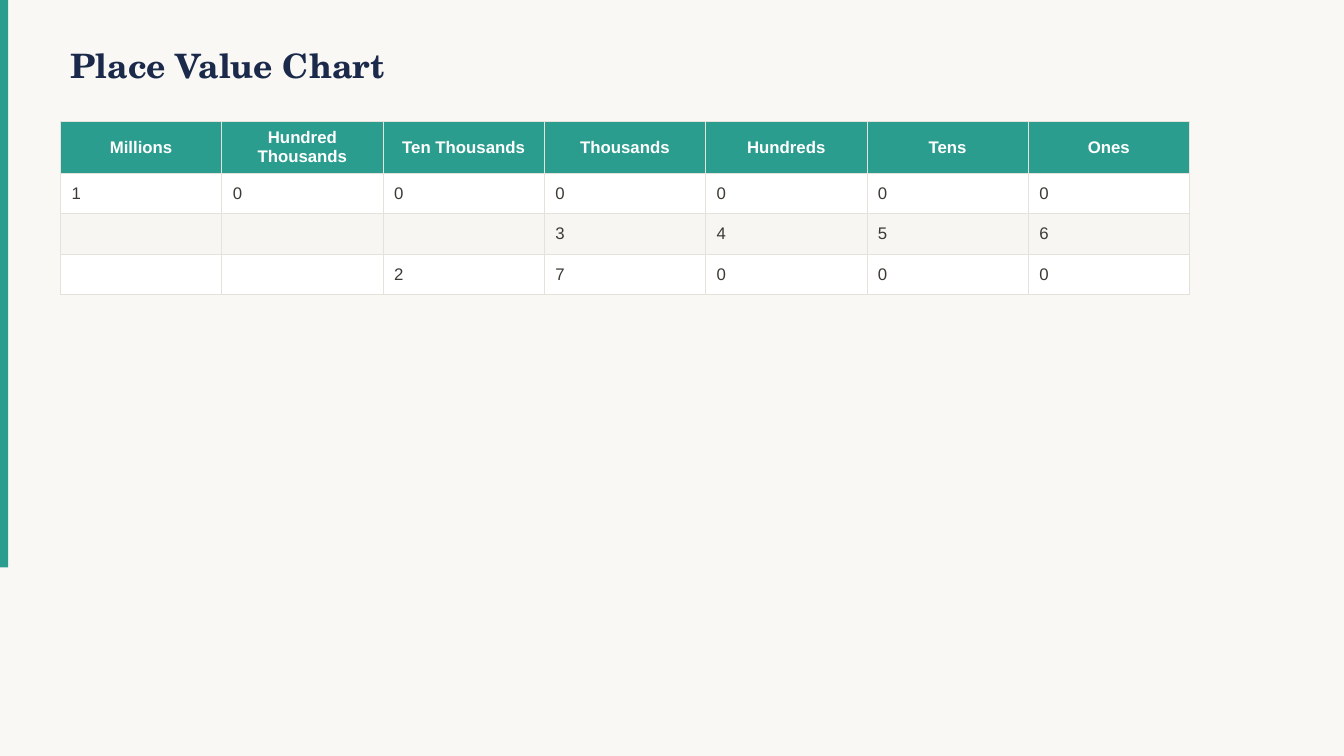
import pptx
import pptx.dml.color
import pptx.enum.shapes
import pptx.enum.text
import pptx.oxml
import pptx.oxml.ns
import pptx.util
from pptx.util import Inches

TEAL = "2A9D8F"
NAVY = "1B2A4A"
INK = "3D3A36"
WHITE = "FFFFFF"
STRIPE = "F8F6F3"
RULE = "E5E2DC"
PAPER = "FAF8F5"

PLACES = ["Millions", "Hundred Thousands", "Ten Thousands", "Thousands",
          "Hundreds", "Tens", "Ones"]
NUMBERS = ["1000000", "3456", "27000"]


def color(value):
    return pptx.dml.color.RGBColor.from_string(value)


def style_font(font, name, size, hue, bold):
    font.name = name
    font.size = pptx.util.Pt(size)
    font.color.rgb = color(hue)
    font.bold = bold


def add_accent_bar(slide, left, top, width, height):
    bar = slide.shapes.add_shape(pptx.enum.shapes.MSO_SHAPE.RECTANGLE,
                                 Inches(left), Inches(top), Inches(width), Inches(height))
    bar.shadow.inherit = False
    bar.fill.solid()
    bar.fill.fore_color.rgb = color(TEAL)
    bar.line.fill.background()


def add_title(slide, left, top, width, height):
    title = slide.shapes.add_textbox(Inches(left), Inches(top), Inches(width), Inches(height))
    frame = title.text_frame
    frame.word_wrap = True
    frame.vertical_anchor = pptx.enum.text.MSO_ANCHOR.MIDDLE
    heading = frame.paragraphs[0]
    heading.text = "Place Value Chart"
    style_font(heading.font, "TeX Gyre Schola", 24, NAVY, True)


def add_borders(cell):
    properties = cell._tc.get_or_add_tcPr()
    for side in ("lnL", "lnR", "lnT", "lnB"):
        properties.append(pptx.oxml.parse_xml(
            f'<a:{side} {pptx.oxml.ns.nsdecls("a")} w="{pptx.util.Pt(0.5)}">'
            f'<a:solidFill><a:srgbClr val="{RULE}"/></a:solidFill></a:{side}>'))


def fill_cell(cell, text, background, hue, is_header):
    add_borders(cell)
    cell.fill.solid()
    cell.fill.fore_color.rgb = color(background)
    cell.vertical_anchor = pptx.enum.text.MSO_ANCHOR.MIDDLE
    cell.margin_left = cell.margin_right = Inches(0.11)
    cell.margin_top = cell.margin_bottom = Inches(0.06)
    entry = cell.text_frame.paragraphs[0]
    if text:
        entry.text = text
    if is_header:
        entry.alignment = pptx.enum.text.PP_ALIGN.CENTER
    style_font(entry.font, "Arial", 12, hue, is_header)


def add_place_value_table(slide, left, top, width, header_height, row_height):
    rows = [PLACES] + [[""] * (len(PLACES) - len(number)) + list(number) for number in NUMBERS]
    height = header_height + row_height * len(NUMBERS)
    table = slide.shapes.add_table(len(rows), len(PLACES), Inches(left), Inches(top),
                                   Inches(width), Inches(height)).table
    for column in table.columns:
        column.width = Inches(width / len(PLACES))
    for index, texts in enumerate(rows):
        is_header = index == 0
        table.rows[index].height = Inches(header_height if is_header else row_height)
        background = TEAL if is_header else WHITE if index % 2 else STRIPE
        for cell, text in zip(table.rows[index].cells, texts):
            fill_cell(cell, text, background, WHITE if is_header else INK, is_header)


def main():
    deck = pptx.Presentation()
    deck.slide_width = Inches(13.33)
    deck.slide_height = Inches(7.5)
    slide = deck.slides.add_slide(deck.slide_layouts[6])
    slide.background.fill.solid()
    slide.background.fill.fore_color.rgb = color(PAPER)
    add_accent_bar(slide, 0, 0, 0.08, 5.63)
    add_title(slide, 0.6, 0.3, 10, 0.7)
    add_place_value_table(slide, 0.6, 1.2, 11.2, 0.45, 0.4)
    deck.save("out.pptx")


if __name__ == "__main__":
    main()
